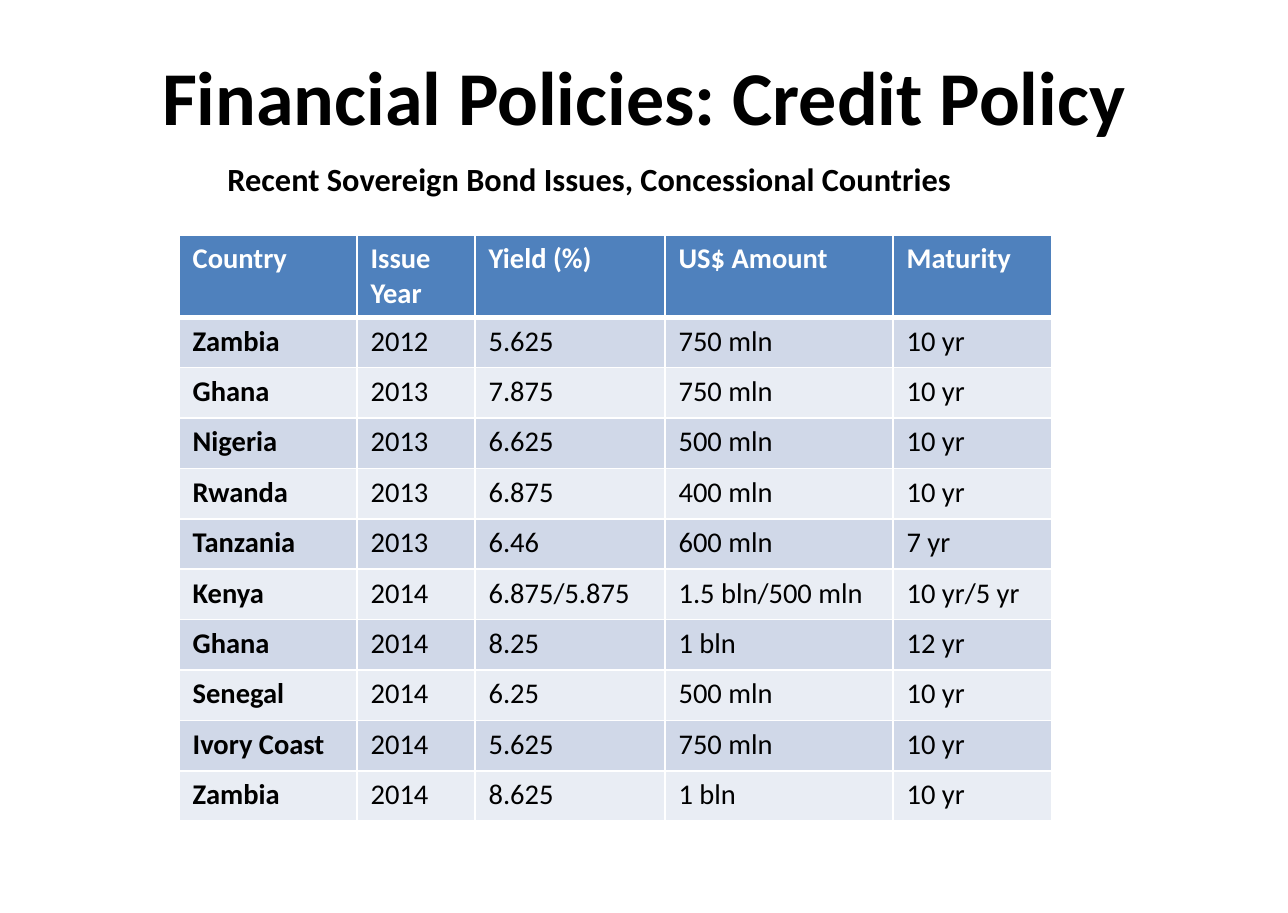
from pptx import Presentation
from pptx.dml.color import RGBColor as Rgb
from pptx.enum.text import MSO_ANCHOR as Anchor, PP_ALIGN as Align
from pptx.oxml.ns import qn
from pptx.util import Emu, Pt
from lxml.etree import SubElement as Sub

TITLE = "Financial Policies: Credit Policy"
LEAD = "Recent Sovereign Bond Issues, Concessional Countries"
HEAD = ("Country", "Issue Year", "Yield (%)", "US$ Amount", "Maturity")
BONDS = [
    ("Zambia", "2012", "5.625", "750 mln", "10 yr"),
    ("Ghana", "2013", "7.875", "750 mln", "10 yr"),
    ("Nigeria", "2013", "6.625", "500 mln", "10 yr"),
    ("Rwanda", "2013", "6.875", "400 mln", "10 yr"),
    ("Tanzania", "2013", "6.46", "600 mln", "7 yr"),
    ("Kenya", "2014", "6.875/5.875", "1.5 bln/500 mln", "10 yr/5 yr"),
    ("Ghana", "2014", "8.25", "1 bln", "12 yr"),
    ("Senegal", "2014", "6.25", "500 mln", "10 yr"),
    ("Ivory Coast", "2014", "5.625", "750 mln", "10 yr"),
    ("Zambia", "2014", "8.625", "1 bln", "10 yr"),
]
COLORS = {"ink": "000000", "white": "FFFFFF", "head": "4F81BD",
          "odd": "D0D8E8", "even": "E9EDF4"}
FONT = "Calibri"
WIDTHS = (178, 118, 190, 228, 159)
LEFT, TOP, HEAD_H, BODY_H = 179, 235, 82, 504
SCALE = 914400 / 136.9


def px(n):
    return Emu(round(n * SCALE))


def style(frame, size, color, bold):
    for run in frame.paragraphs[0].runs:
        font = run.font
        font.name, font.size, font.bold = FONT, Pt(size), bold
        font.color.rgb = Rgb.from_string(COLORS[color])


def add_text(slide, text, box, size, align, anchor):
    frame = slide.shapes.add_textbox(*map(px, box)).text_frame
    frame.word_wrap = True
    frame.vertical_anchor = anchor
    frame.text = text
    frame.paragraphs[0].alignment = align
    style(frame, size, "ink", True)


def add_edge(cell, side, width):
    line = Sub(cell._tc.get_or_add_tcPr(), qn("a:ln" + side), w=str(Pt(width)))
    fill = Sub(line, qn("a:solidFill"))
    Sub(fill, qn("a:srgbClr"), val=COLORS["white"])


def fill_cell(cell, text, row, col):
    edges = {"L": 1, "R": 1, "T": 3 if row == 1 else 1, "B": 1 if row else 3}
    for side, width in edges.items():
        add_edge(cell, side, width)
    back = ("even", "odd")[row % 2] if row else "head"
    cell.fill.solid()
    cell.fill.fore_color.rgb = Rgb.from_string(COLORS[back])
    cell.text = text
    style(cell.text_frame, 15, "ink" if row else "white", row == 0 or col == 0)


def add_bonds(slide):
    rows = [HEAD, *BONDS]
    box = (LEFT, TOP, sum(WIDTHS), HEAD_H + BODY_H)
    table = slide.shapes.add_table(len(rows), len(HEAD), *map(px, box)).table
    for column, width in zip(table.columns, WIDTHS):
        column.width = px(width)
    for r, texts in enumerate(rows):
        table.rows[r].height = px(BODY_H / len(BONDS) if r else HEAD_H)
        for c, text in enumerate(texts):
            fill_cell(table.cell(r, c), text, r, c)


def main():
    deck = Presentation()
    deck.slide_width, deck.slide_height = px(1288), px(913)
    slide = deck.slides.add_slide(deck.slide_layouts[6])
    add_text(slide, TITLE, (64, 37, 1160, 116), 40, Align.CENTER, Anchor.MIDDLE)
    add_bonds(slide)
    add_text(slide, LEAD, (214, 152, 769, 53), 17, Align.LEFT, Anchor.TOP)
    deck.save("out.pptx")


if __name__ == "__main__":
    main()
